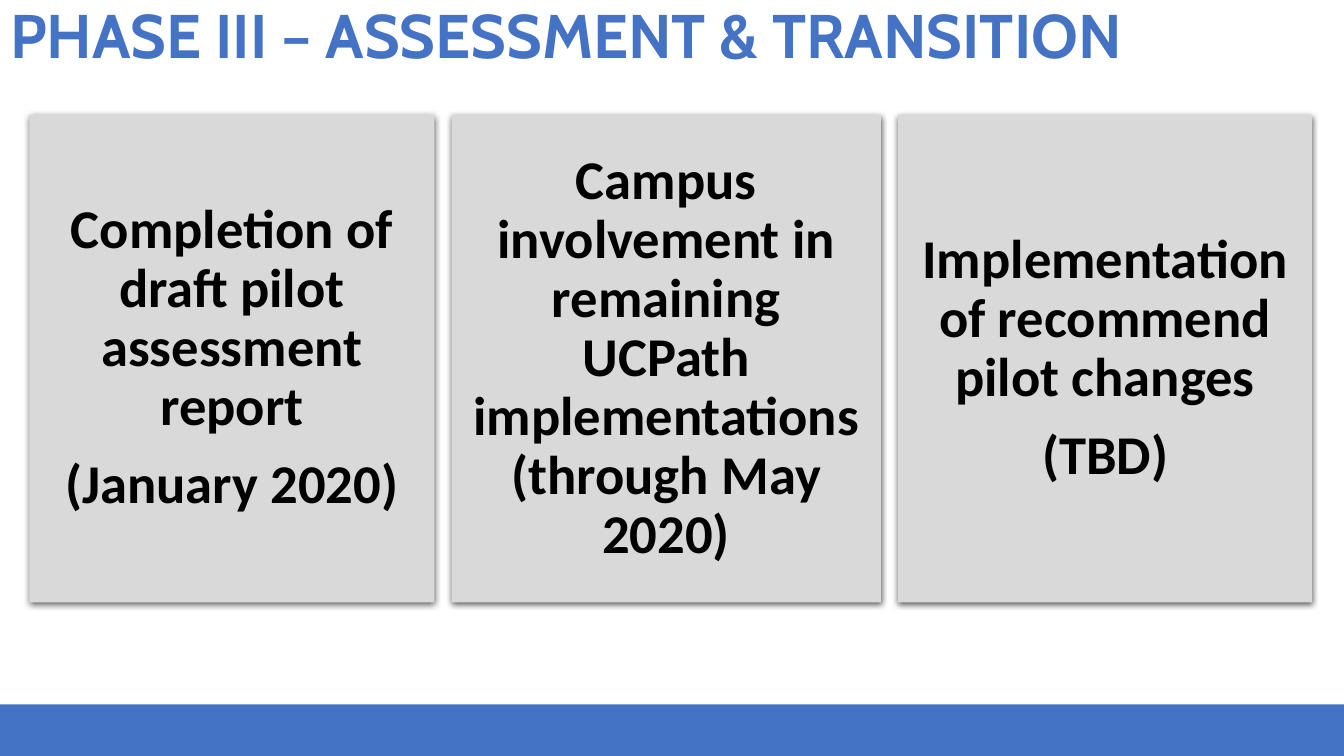
from lxml import etree
from pptx import Presentation
from pptx.dml.color import RGBColor
from pptx.enum.shapes import MSO_SHAPE
from pptx.enum.text import MSO_ANCHOR, MSO_AUTO_SIZE, PP_ALIGN
from pptx.oxml import parse_xml
from pptx.util import Cm, Pt

RECTANGLE = MSO_SHAPE.RECTANGLE
TOP, MIDDLE = MSO_ANCHOR.TOP, MSO_ANCHOR.MIDDLE
LEFT, CENTER = PP_ALIGN.LEFT, PP_ALIGN.CENTER
NO_AUTOFIT = MSO_AUTO_SIZE.NONE
DRAWING_NS = "http://schemas.openxmlformats.org/drawingml/2006/main"

BLUE, GREY, BLACK = "4472C4", "D9D9D9", "000000"
SLIDE_WIDTH, SLIDE_HEIGHT = 33.87, 19.05
BAR_HEIGHT = 1.3
CARD_LEFT, CARD_TOP, CARD_HEIGHT, CARD_GAP = 0.74, 2.9, 12.28, 0.43
CARD_INSET = 0.41
STEPS = [
    (10.21, ["Completion of draft pilot assessment report", "(January 2020)"]),
    (10.82, ["Campus involvement in remaining UCPath implementations (through May 2020)"]),
    (10.44, ["Implementation of recommend pilot changes", "(TBD)"]),
]


def color(hex_string):
    """Turn a hex string into a colour."""
    return RGBColor.from_string(hex_string)


def write_text(frame, lines, *, font, size, fill, align=LEFT, anchor=TOP, gap=0):
    """Fill a text frame with bold paragraphs in one format."""
    frame.word_wrap = True
    frame.auto_size = NO_AUTOFIT
    frame.vertical_anchor = anchor
    for index, line in enumerate(lines):
        paragraph = frame.add_paragraph() if index else frame.paragraphs[0]
        paragraph.alignment = align
        paragraph.line_spacing = 0.9
        paragraph.space_before = Pt(0)
        paragraph.space_after = Pt(gap if index < len(lines) - 1 else 0)
        run = paragraph.add_run()
        run.text = line
        run.font.name = font
        run.font.size = Pt(size)
        run.font.bold = True
        run.font.color.rgb = color(fill)


def add_panel(slide, left, top, width, height, fill):
    """Add a plain filled rectangle, measured in centimetres."""
    panel = slide.shapes.add_shape(RECTANGLE, Cm(left), Cm(top), Cm(width), Cm(height))
    panel.shadow.inherit = False
    panel.fill.solid()
    panel.fill.fore_color.rgb = color(fill)
    panel.line.fill.background()
    return panel


def add_shadow(panel):
    """Give a panel a soft shadow just below it."""
    effects = panel.element.spPr.find(f"{{{DRAWING_NS}}}effectLst")
    shadow = parse_xml(
        f'<a:outerShdw xmlns:a="{DRAWING_NS}" blurRad="{Pt(4.5)}" dist="{Pt(1.5)}" '
        'dir="5400000" algn="ctr" rotWithShape="0"/>'
    )
    tint = etree.SubElement(shadow, f"{{{DRAWING_NS}}}srgbClr", val=BLACK)
    etree.SubElement(tint, f"{{{DRAWING_NS}}}alpha", val="63000")
    effects.append(shadow)


def add_title(slide, heading):
    """Place and format the slide title."""
    title = slide.shapes.title
    title.left, title.top, title.width, title.height = Cm(0), Cm(0), Cm(33), Cm(1.85)
    write_text(title.text_frame, [heading], font="Cabin", size=44, fill=BLUE)


def add_card(slide, left, width, lines):
    """Add one step of the phase as a grey card."""
    card = add_panel(slide, left, CARD_TOP, width, CARD_HEIGHT, GREY)
    add_shadow(card)
    frame = card.text_frame
    frame.margin_left = frame.margin_right = Cm(CARD_INSET)
    frame.margin_top = frame.margin_bottom = Cm(CARD_INSET)
    write_text(frame, lines, font="Calibri", size=39, fill=BLACK,
               align=CENTER, anchor=MIDDLE, gap=13.65)


def main():
    """Build the slide and save it."""
    deck = Presentation()
    deck.slide_width, deck.slide_height = Cm(SLIDE_WIDTH), Cm(SLIDE_HEIGHT)
    slide = deck.slides.add_slide(deck.slide_layouts[5])
    add_panel(slide, 0, SLIDE_HEIGHT - BAR_HEIGHT, SLIDE_WIDTH, BAR_HEIGHT, BLUE)
    add_title(slide, "PHASE III – ASSESSMENT & TRANSITION")
    left = CARD_LEFT
    for width, lines in STEPS:
        add_card(slide, left, width, lines)
        left += width + CARD_GAP
    deck.save("out.pptx")


if __name__ == "__main__":
    main()
